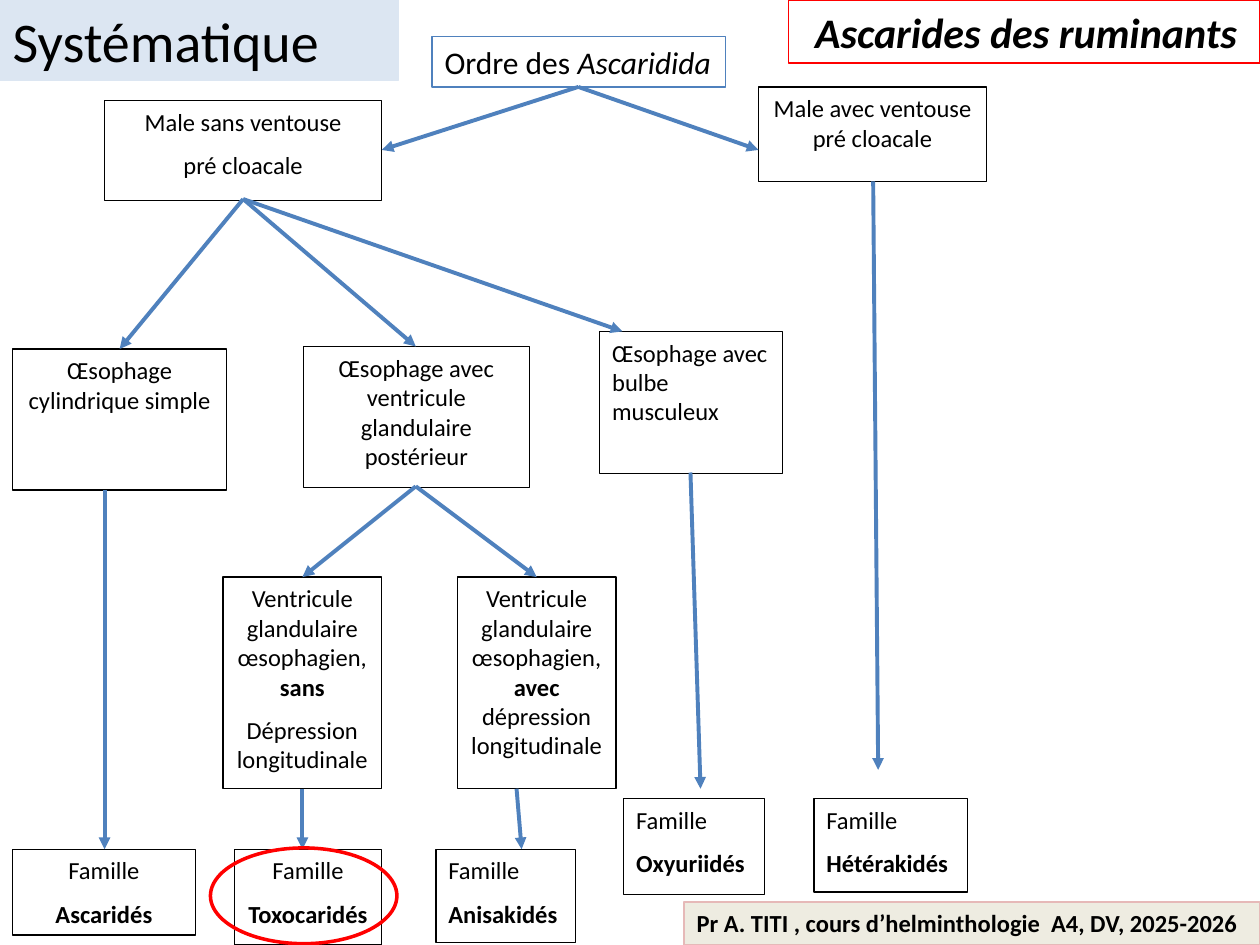
from pptx import Presentation
from pptx.dml.color import RGBColor
from pptx.enum import shapes as es, text as et
from pptx.oxml import parse_xml
from pptx.oxml.ns import nsdecls
from pptx.util import Inches, Pt

BLACK, WHITE, BLUE, RED = "000000", "FFFFFF", "4F81BD", "FF0000"
PALE = "DCE6F2"
LEFT, MID = et.PP_ALIGN.LEFT, et.PP_ALIGN.CENTER

# Place, alignment and paragraphs of each box; *stars* mark bold words
BOXES = [
    ((6.02, 0.69, 1.81, 0.75), MID, ["Male avec ventouse pré cloacale"]),
    ((0.83, 0.8, 2.2, 0.79), MID, ["Male sans ventouse", "pré cloacale"]),
    ((0.1, 2.77, 1.7, 1.12), MID, ["Œsophage cylindrique simple"]),
    ((2.41, 2.75, 1.79, 1.12), MID,
     ["Œsophage avec ventricule glandulaire postérieur"]),
    ((4.76, 2.63, 1.45, 1.13), LEFT, ["Œsophage avec bulbe musculeux"]),
    ((3.63, 4.58, 1.26, 1.68), MID,
     ["Ventricule glandulaire œsophagien, *avec* dépression longitudinale"]),
    ((1.77, 4.58, 1.26, 1.68), MID,
     ["Ventricule glandulaire œsophagien, *sans*",
      "Dépression longitudinale"]),
]

# Family boxes: place, alignment, name
FAMILIES = [
    ((0.1, 6.74, 1.45, 0.68), MID, "*Ascaridés*"),
    ((1.86, 6.74, 1.17, 0.76), MID, "*Toxocaridés*"),
    ((3.46, 6.74, 1.11, 0.74), LEFT, "*Anisakidés*"),
    ((4.95, 6.34, 1.12, 0.76), LEFT, "*Oxyuriidés*"),
    ((6.46, 6.34, 1.22, 0.74), LEFT, "*Hétérakidés*"),
]

# Each starting point with the points its arrows reach
LINKS = [
    ((4.59, 0.69), [(3.03, 1.19), (6.02, 1.19)]),
    ((1.93, 1.58), [(0.95, 2.77), (3.3, 2.75), (4.94, 2.63)]),
    ((3.3, 3.86), [(4.26, 4.58), (2.4, 4.58)]),
    ((6.93, 1.44), [(6.97, 6.11)]),
    ((5.48, 3.75), [(5.56, 6.26)]),
    ((0.83, 3.89), [(0.83, 6.74)]),
    ((4.1, 6.26), [(4.14, 6.74)]),
    ((2.4, 6.26), [(2.4, 6.74)]),
]


def rgb(code):
    return RGBColor.from_string(code)


def paint(shape, fill, line, width=0.75):
    if fill:
        shape.fill.solid()
        shape.fill.fore_color.rgb = rgb(fill)
    else:
        shape.fill.background()
    shape.line.color.rgb = rgb(line)
    shape.line.width = Pt(width)


def style(run, size, bold=False, italic=False):
    font = run.font
    font.name, font.size = "Calibri", Pt(size)
    font.bold, font.italic = bold, italic
    font.color.rgb = rgb(BLACK)


def add_form(slide, kind, place, fill, line, width=0.75):
    shape = slide.shapes.add_shape(kind, *map(Inches, place))
    shape.shadow.inherit = False
    paint(shape, fill, line, width)
    return shape


def add_box(slide, place, paras, align=LEFT, fill=WHITE, line=BLACK,
            size=14, after=8, italic=False):
    """Rectangle with text; starred words turn bold, or italic if asked."""
    box = add_form(slide, es.MSO_SHAPE.RECTANGLE, place, fill, line)
    frame = box.text_frame
    frame.word_wrap = True
    frame.vertical_anchor = et.MSO_ANCHOR.TOP
    frame.text = "\n".join(paras)
    for para, words in zip(frame.paragraphs, paras):
        para.text = ""
        para.alignment, para.space_after = align, Pt(after)
        for i, part in enumerate(words.split("*")):
            if part:
                run = para.add_run()
                run.text = part
                mark = i % 2 == 1
                style(run, size, mark and not italic, mark and italic)
    return box


def add_arrow(slide, start, end):
    line = slide.shapes.add_connector(
        es.MSO_CONNECTOR.STRAIGHT, *map(Inches, start + end))
    line.line.color.rgb = rgb(BLUE)
    line.line.width = Pt(2.25)
    line.line._get_or_add_ln().append(
        parse_xml(f'<a:tailEnd {nsdecls("a")} type="triangle"/>'))
    line._element.spPr.append(parse_xml(f'<a:effectLst {nsdecls("a")}/>'))


def set_title(slide, words):
    title = slide.shapes.title
    title.left, title.top = Inches(0), Inches(0)
    title.width, title.height = Inches(3.16), Inches(0.64)
    paint(title, PALE, PALE)
    frame = title.text_frame
    frame.text = words
    frame.auto_size = et.MSO_AUTO_SIZE.NONE
    frame.vertical_anchor = et.MSO_ANCHOR.TOP
    frame.paragraphs[0].alignment = LEFT
    style(frame.paragraphs[0].runs[0], 32)


def main():
    deck = Presentation()
    deck.slide_width, deck.slide_height = Inches(10), Inches(7.5)
    slide = deck.slides.add_slide(deck.slide_layouts[5])
    set_title(slide, "Systématique")

    # Tree of boxes
    order = add_box(slide, (3.43, 0.29, 2.33, 0.4),
                    ["Ordre des *Ascaridida*"], fill=None, line=BLUE,
                    size=18, after=0, italic=True)
    order.text_frame.word_wrap = False
    for place, align, paras in BOXES:
        add_box(slide, place, paras, align)
    for place, align, name in FAMILIES:
        add_box(slide, place, ["Famille", name], align)

    # Arrows
    for start, ends in LINKS:
        for end in ends:
            add_arrow(slide, start, end)

    # Ring around the family studied
    add_form(slide, es.MSO_SHAPE.OVAL, (1.67, 6.73, 1.48, 0.76),
             None, RED, 2)

    # Topic and footer
    topic = add_box(slide, (6.26, 0, 3.74, 0.5),
                    ["*Ascarides des ruminants*"], fill=None, line=RED,
                    size=24, after=0)
    topic.text_frame.margin_left = Inches(0.21)
    topic.text_frame.paragraphs[0].runs[0].font.italic = True
    add_box(slide, (5.43, 7.16, 4.57, 0.34),
            ["*Pr A. TITI , cours d’helminthologie  A4, DV, 2025-2026*"],
            fill="EEECE1", line="E6B9B8", after=0)

    deck.save("out.pptx")


if __name__ == "__main__":
    main()
